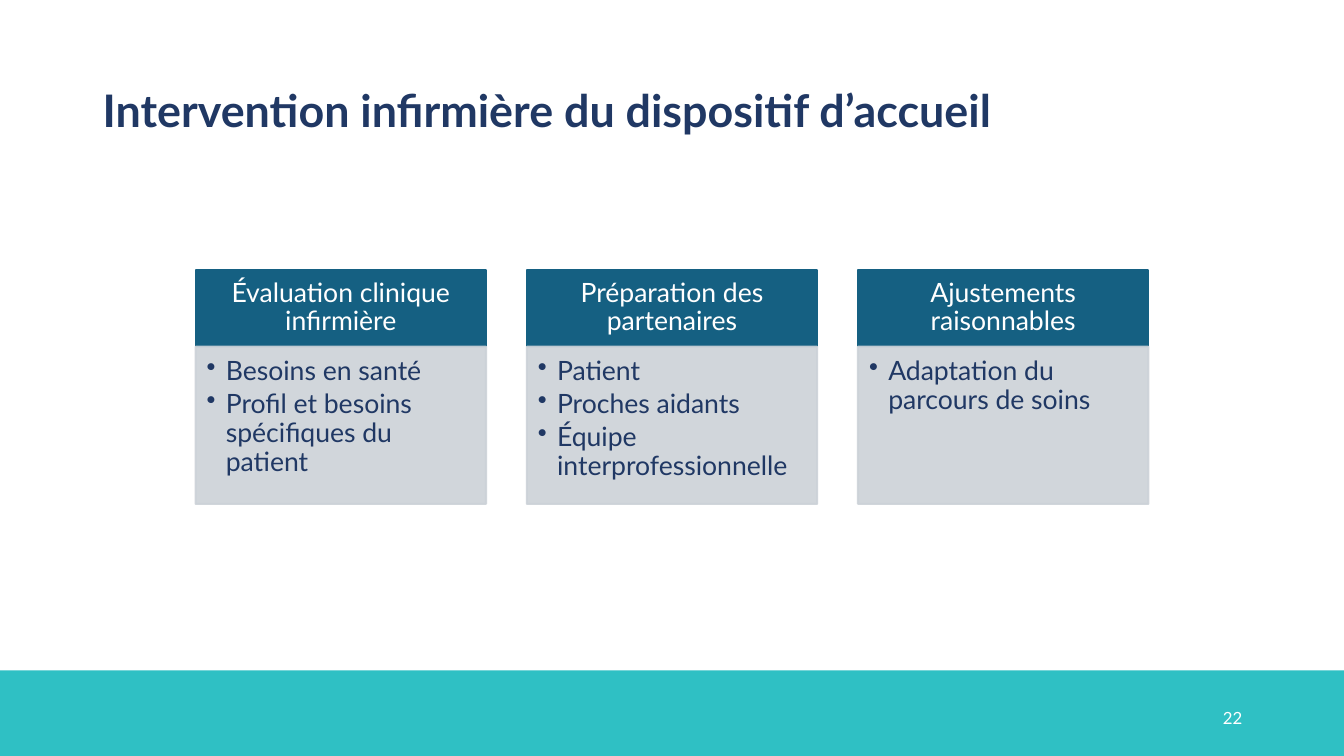
from pptx import Presentation
from pptx.dml.color import RGBColor
from pptx.enum.shapes import MSO_SHAPE as Shape
from pptx.enum.text import MSO_ANCHOR as Anchor, PP_ALIGN as Align
from pptx.oxml.ns import qn
from pptx.util import Inches, Pt
from lxml import etree

FONT = "Lato"
NAVY, BLUE, GREY, TEAL, WHITE = "203864", "156082", "CCD2D8", "2FC0C4", "FFFFFF"

COLUMN_LEFT, COLUMN_STEP, COLUMN_WIDTH = 1.94, 3.285, 2.88
HEADER_TOP, HEADER_HEIGHT = 2.68, 0.75
BODY_TOP, BODY_HEIGHT = 3.44, 1.56

COLUMNS = [
    ("Évaluation clinique infirmière",
     ["Besoins en santé", "Profil et besoins spécifiques du patient"]),
    ("Préparation des partenaires",
     ["Patient", "Proches aidants", "Équipe interprofessionnelle"]),
    ("Ajustements raisonnables",
     ["Adaptation du parcours de soins"]),
]


def color(value):
    return RGBColor.from_string(value)


def set_alpha(fill_format, percent):
    """Make a solid fill partly transparent."""
    fill_color = fill_format._xPr.find(qn("a:solidFill"))[0]
    etree.SubElement(fill_color, qn("a:alpha")).set("val", str(percent * 1000))


def add_box(slide, left, top, width, height, fill, outlined=True, alpha=None):
    shape = slide.shapes.add_shape(
        Shape.RECTANGLE, Inches(left), Inches(top), Inches(width), Inches(height))
    shape.shadow.inherit = False
    shape.fill.solid()
    shape.fill.fore_color.rgb = color(fill)
    if outlined:
        shape.line.color.rgb = color(fill)
        shape.line.width = Pt(1.5)
    else:
        shape.line.fill.background()
    if alpha:
        set_alpha(shape.fill, alpha)
        set_alpha(shape.line.fill, alpha)
    return shape


def set_bullet(paragraph, indent):
    properties = paragraph._p.get_or_add_pPr()
    properties.set("marL", str(Inches(indent)))
    properties.set("indent", str(-Inches(indent)))
    etree.SubElement(properties, qn("a:buChar")).set("char", "•")


def write(shape, lines, size, text_color, align=Align.LEFT, anchor=Anchor.MIDDLE,
          insets=(0.1, 0.05, 0.1, 0.05), spacing=0.9, after=0, bold=False,
          bulleted=False):
    frame = shape.text_frame
    frame.word_wrap = True
    frame.vertical_anchor = anchor
    (frame.margin_left, frame.margin_top,
     frame.margin_right, frame.margin_bottom) = map(Inches, insets)
    frame.text = "\n".join(lines)
    for paragraph in frame.paragraphs:
        paragraph.alignment = align
        paragraph.line_spacing = spacing
        paragraph.space_after = Pt(after)
        if bulleted:
            paragraph.level = 1
            set_bullet(paragraph, 0.19)
        font = paragraph.font
        font.name, font.size, font.bold = FONT, Pt(size), bold
        font.color.rgb = color(text_color)


def add_text(slide, left, top, width, height, text, size, text_color, **style):
    box = slide.shapes.add_textbox(
        Inches(left), Inches(top), Inches(width), Inches(height))
    write(box, [text], size, text_color, **style)


def add_column(slide, left, heading, items):
    header = add_box(slide, left, HEADER_TOP, COLUMN_WIDTH, HEADER_HEIGHT, BLUE)
    write(header, [heading], 19, WHITE, align=Align.CENTER,
          insets=(0.15, 0.08, 0.15, 0.08))
    body = add_box(slide, left, BODY_TOP, COLUMN_WIDTH, BODY_HEIGHT, GREY, alpha=90)
    write(body, items, 19, NAVY, anchor=Anchor.TOP,
          insets=(0.11, 0.11, 0.15, 0.17), after=3, bulleted=True)


def main():
    presentation = Presentation()
    presentation.slide_width = Inches(13.33)
    presentation.slide_height = Inches(7.5)
    slide = presentation.slides.add_slide(presentation.slide_layouts[6])

    # Footer band, title and slide number
    add_box(slide, 0, 6.65, 13.33, 0.85, TEAL, outlined=False)
    add_text(slide, 0.92, 0.4, 11.5, 1.45,
             "Intervention infirmière du dispositif d’accueil", 32, NAVY, bold=True)
    add_text(slide, 11.12, 6.89, 1.3, 0.46, "22", 12, WHITE,
             align=Align.RIGHT, spacing=1.0)

    # Three columns, each a heading over a bulleted list
    for index, (heading, items) in enumerate(COLUMNS):
        add_column(slide, COLUMN_LEFT + index * COLUMN_STEP, heading, items)

    presentation.save("out.pptx")


if __name__ == "__main__":
    main()
